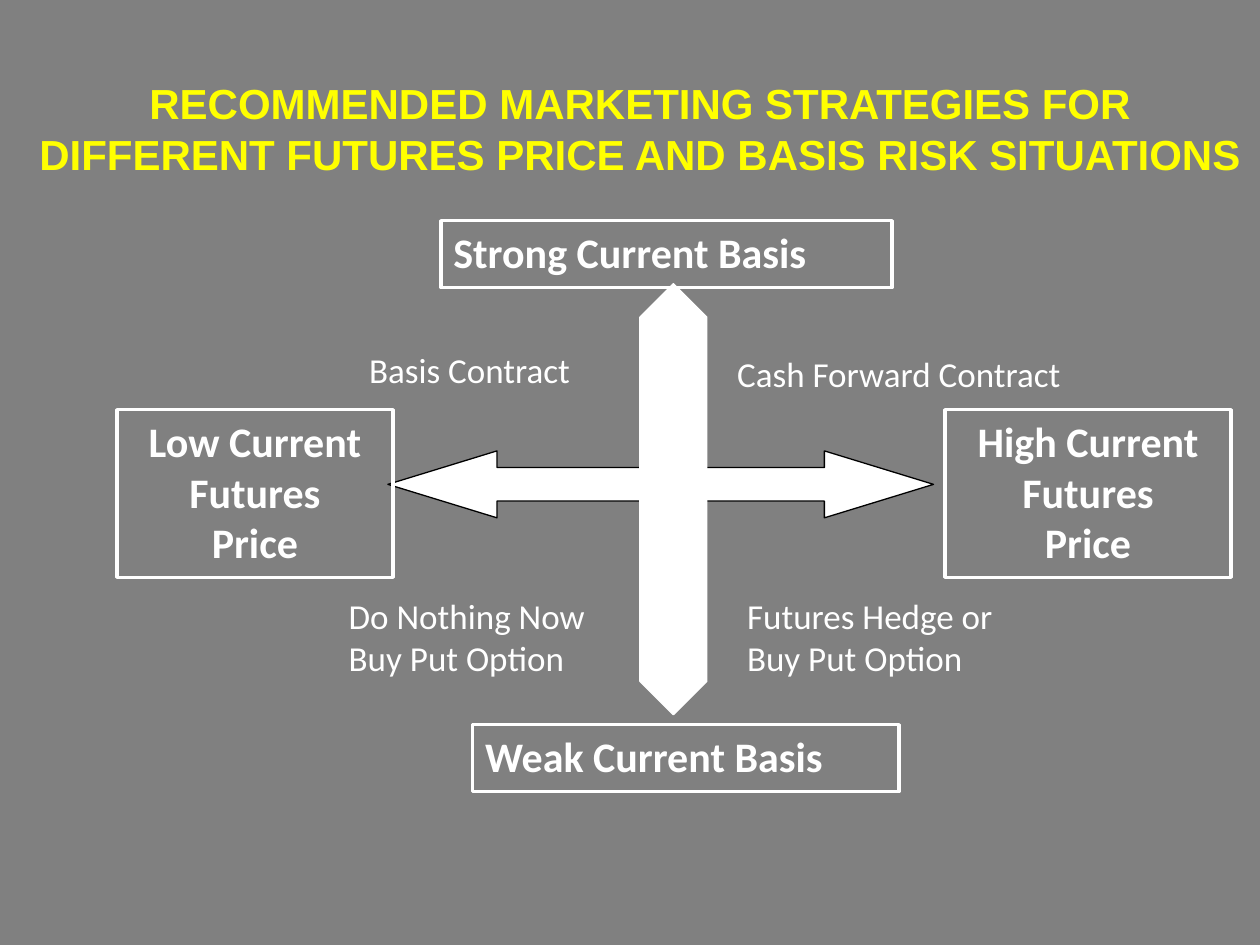
from pptx import Presentation
from pptx.dml.color import RGBColor
from pptx.enum.shapes import MSO_SHAPE
from pptx.enum.text import MSO_ANCHOR, PP_ALIGN
from pptx.util import Cm, Pt

COLOURS = {
    "background": "808080",
    "title": "FFFF00",
    "light": "FFFFFF",
    "outline": "000000",
}


def colour(name):
    return RGBColor.from_string(COLOURS[name])


def write_lines(box, lines, size, font="Calibri", ink="light", bold=False,
                align=PP_ALIGN.LEFT):
    frame = box.text_frame
    frame.word_wrap = True
    frame.vertical_anchor = MSO_ANCHOR.TOP
    for index, line in enumerate(lines):
        para = frame.paragraphs[0] if index == 0 else frame.add_paragraph()
        para.text = line
        para.alignment = align
        para.font.name = font
        para.font.size = Pt(size)
        para.font.bold = bold
        para.font.color.rgb = colour(ink)


def add_title(page, text):
    box = page.shapes.add_textbox(Cm(0.74), Cm(1.57), Cm(24.33), Cm(3.18))
    frame = box.text_frame
    frame.margin_left = frame.margin_right = 0
    frame.margin_top = frame.margin_bottom = 0
    write_lines(box, [text], 24, "Arial", "title", True, PP_ALIGN.CENTER)


def add_outlined_shape(page, kind, place, line, width):
    shape = page.shapes.add_shape(kind, *map(Cm, place))
    shape.shadow.inherit = False
    shape.line.color.rgb = colour(line)
    shape.line.width = Pt(width)
    return shape


def add_axis(page, kind, place, head, line):
    arrow = add_outlined_shape(page, kind, place, line, 0.75)
    arrow.fill.solid()
    arrow.fill.fore_color.rgb = colour("light")
    arrow.adjustments[0] = 0.5
    arrow.adjustments[1] = head


def add_condition(page, place, lines, align):
    box = add_outlined_shape(page, MSO_SHAPE.RECTANGLE, place, "light", 2)
    box.fill.background()
    write_lines(box, lines, 24, bold=True, align=align)


def add_strategy(page, place, lines):
    box = page.shapes.add_textbox(*map(Cm, place))
    write_lines(box, lines, 20)


def main():
    deck = Presentation()
    deck.slide_width, deck.slide_height = Cm(25.4), Cm(19.05)
    page = deck.slides.add_slide(deck.slide_layouts[6])
    page.background.fill.solid()
    page.background.fill.fore_color.rgb = colour("background")

    add_title(page, "RECOMMENDED MARKETING STRATEGIES FOR "
                    "DIFFERENT FUTURES PRICE AND BASIS RISK SITUATIONS")

    # Axes: futures price across, basis upwards
    add_axis(page, MSO_SHAPE.LEFT_RIGHT_ARROW, (7.82, 9.09, 11, 1.35), 1.63, "outline")
    add_axis(page, MSO_SHAPE.UP_DOWN_ARROW, (12.9, 5.72, 1.35, 8.69), 1.29, "light")

    # Conditions at the ends of the axes
    conditions = [
        ((8.89, 4.45, 9.09, 1.35), ["Strong Current Basis"], PP_ALIGN.LEFT),
        ((9.53, 14.61, 8.59, 1.35), ["Weak Current Basis"], PP_ALIGN.LEFT),
        ((2.36, 8.26, 5.56, 3.38), ["Low Current", "Futures", "Price"], PP_ALIGN.CENTER),
        ((19.05, 8.26, 5.77, 3.38), ["High Current", "Futures", "Price"], PP_ALIGN.CENTER),
    ]
    for place, lines, align in conditions:
        add_condition(page, place, lines, align)

    # Strategy in each quadrant
    strategies = [
        ((7.19, 6.91, 5.11, 1.09), ["Basis Contract"]),
        ((14.61, 6.99, 7.8, 1.09), ["Cash Forward Contract"]),
        ((6.78, 11.86, 5.66, 1.96), ["Do Nothing Now", "Buy Put Option"]),
        ((14.81, 11.86, 5.51, 1.96), ["Futures Hedge or", "Buy Put Option"]),
    ]
    for place, lines in strategies:
        add_strategy(page, place, lines)

    deck.save("out.pptx")


if __name__ == "__main__":
    main()
